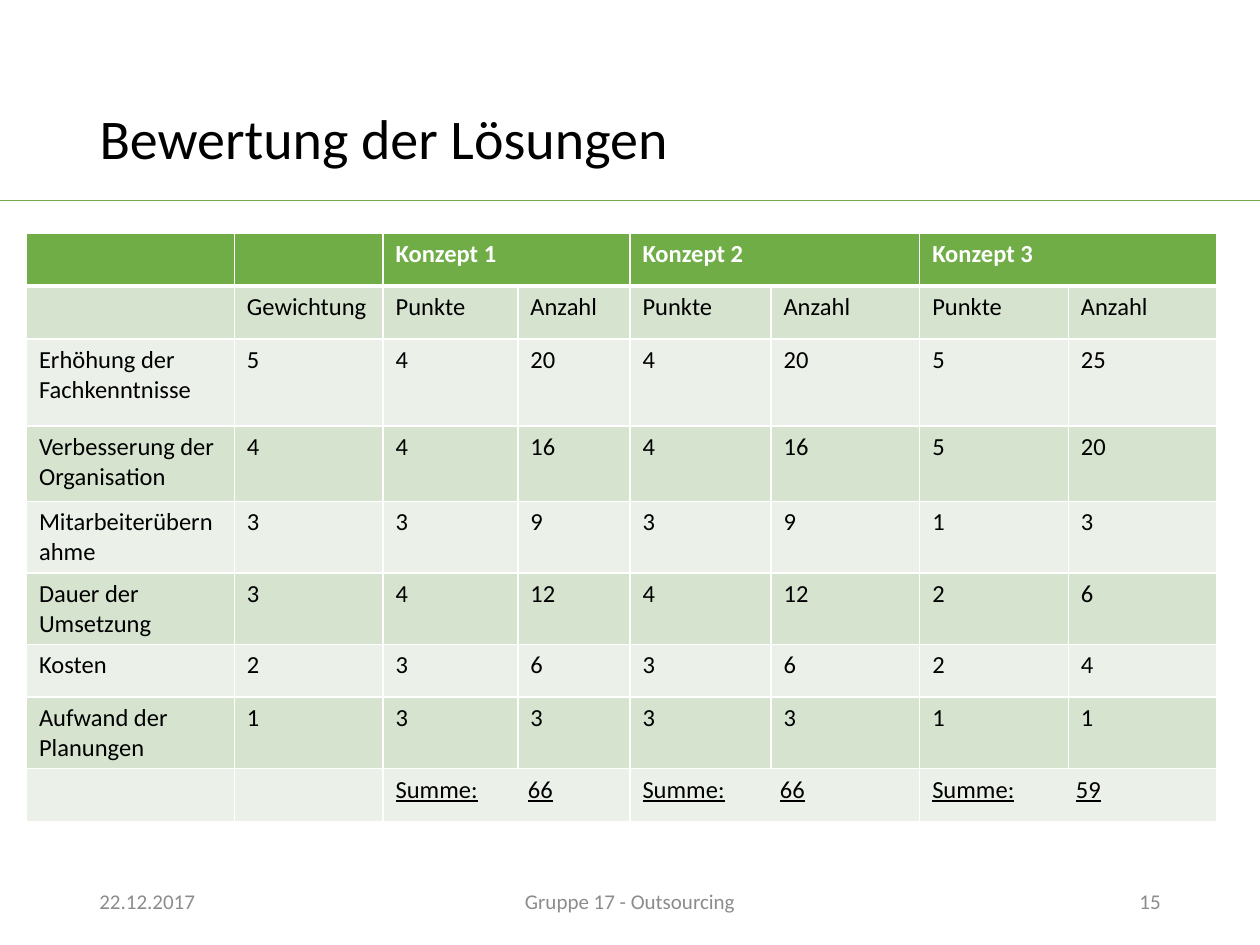
from dataclasses import dataclass

from lxml.etree import SubElement
from pptx import Presentation
from pptx.dml.color import RGBColor
from pptx.enum.shapes import MSO_CONNECTOR
from pptx.enum.text import MSO_ANCHOR, PP_ALIGN
from pptx.oxml.ns import qn
from pptx.util import Inches, Pt


@dataclass(frozen=True)
class Theme:
    """Colours, font and type sizes of the deck."""
    font: str = "Calibri"
    black: str = "000000"
    white: str = "FFFFFF"
    grey: str = "8C8C8C"
    green: str = "70AD47"
    bands: tuple = ("EBF1E9", "D5E3CF")
    title: int = 32
    body: int = 14
    small: int = 12


THEME = Theme()
COLS = (1.65, 1.18, 1.07, 0.89, 1.12, 1.18, 1.18, 1.18)
ROWS = (0.42, 0.42, 0.69, 0.6) + (0.42,) * 5
PAIRS = (2, 4, 6)
STOPS = {2: 1.05, 4: 1.09, 6: 1.14}
SCORES = (
    ("Erhöhung der Fachkenntnisse", 5, (4, 4, 5)),
    ("Verbesserung der Organisation", 4, (4, 4, 5)),
    ("Mitarbeiterübernahme", 3, (3, 3, 1)),
    ("Dauer der Umsetzung", 3, (4, 4, 2)),
    ("Kosten", 2, (3, 3, 2)),
    ("Aufwand der Planungen", 1, (3, 3, 1)),
)


def style(para, size, color, bold=False, line=False):
    """Format every run of a paragraph."""
    for run in para.runs:
        font = run.font
        font.name, font.size = THEME.font, Pt(size)
        font.bold, font.underline = bold, line
        font.color.rgb = RGBColor.from_string(color)


def add_title(slide, box, text):
    """Fill and place the title placeholder."""
    shape = slide.shapes.title
    shape.left, shape.top, shape.width, shape.height = map(Inches, box)
    frame = shape.text_frame
    frame.text = text
    frame.vertical_anchor = MSO_ANCHOR.MIDDLE
    para = frame.paragraphs[0]
    para.alignment, para.line_spacing = PP_ALIGN.LEFT, 0.9
    style(para, THEME.title, THEME.black)


def add_rule(slide, left, top, width):
    """Draw the thin line below the title."""
    rule = slide.shapes.add_connector(
        MSO_CONNECTOR.STRAIGHT, Inches(left), Inches(top),
        Inches(left + width), Inches(top))
    rule.line.color.rgb = RGBColor.from_string(THEME.green)
    rule.line.width = Pt(0.5)
    SubElement(rule._element.spPr, qn("a:effectLst"))


def add_foot(slide, box, texts):
    """Set date, footer and page number across a box."""
    left, top, width, height = box
    side, mid = 2.25, 3.38
    parts = (
        (left, side, PP_ALIGN.LEFT),
        (left + (width - mid) / 2, mid, PP_ALIGN.CENTER),
        (left + width - side, side, PP_ALIGN.RIGHT),
    )
    for text, (x, span, align) in zip(texts, parts):
        frame = slide.shapes.add_textbox(
            Inches(x), Inches(top), Inches(span), Inches(height)).text_frame
        frame.word_wrap = True
        frame.vertical_anchor = MSO_ANCHOR.MIDDLE
        frame.text = text
        frame.paragraphs[0].alignment = align
        style(frame.paragraphs[0], THEME.small, THEME.grey)


def grid():
    """Return the cell texts, with points and sums worked out."""
    head, names = [""] * 8, ["", "Gewichtung"] + ["Punkte", "Anzahl"] * 3
    sums = [""] * 8
    for i, col in enumerate(PAIRS):
        total = sum(weight * marks[i] for _, weight, marks in SCORES)
        head[col] = f"Konzept {i + 1}"
        sums[col] = f"Summe:\t{total}"
    body = []
    for name, weight, marks in SCORES:
        pairs = [n for mark in marks for n in (mark, mark * weight)]
        body.append([name, str(weight)] + [str(n) for n in pairs])
    return [head, names, *body, sums]


def edge(cell, row):
    """Draw white borders, thick below the header row."""
    props = cell._tc.get_or_add_tcPr()
    thick = {(0, "lnB"), (1, "lnT")}
    for tag in ("lnL", "lnR", "lnT", "lnB"):
        width = Pt(3 if (row, tag) in thick else 1)
        line = SubElement(props, qn(f"a:{tag}"), w=str(width))
        fill = SubElement(line, qn("a:solidFill"))
        SubElement(fill, qn("a:srgbClr"), val=THEME.white)


def add_stop(para, pos):
    """Give a paragraph one left tab stop."""
    tabs = SubElement(para._p.get_or_add_pPr(), qn("a:tabLst"))
    SubElement(tabs, qn("a:tab"), pos=str(Inches(pos)), algn="l")


def add_grid(slide, left, top):
    """Build the rating table at a corner."""
    cells, last = grid(), len(ROWS) - 1
    table = slide.shapes.add_table(
        len(ROWS), len(COLS), Inches(left), Inches(top),
        Inches(sum(COLS)), Inches(sum(ROWS))).table
    for col, width in zip(table.columns, COLS):
        col.width = Inches(width)
    for row, height in zip(table.rows, ROWS):
        row.height = Inches(height)
    for r, texts in enumerate(cells):
        top_row, sum_row = r == 0, r == last
        for c, text in enumerate(texts):
            cell = table.cell(r, c)
            edge(cell, r)
            cell.fill.solid()
            cell.fill.fore_color.rgb = RGBColor.from_string(
                THEME.green if top_row else THEME.bands[r % 2])
            para = cell.text_frame.paragraphs[0]
            if text:
                para.text = text
            if sum_row and c in STOPS:
                add_stop(para, STOPS[c])
            style(para, THEME.body, THEME.white if top_row else THEME.black,
                  top_row, sum_row)
        if top_row or sum_row:
            for c in PAIRS:
                table.cell(r, c).merge(table.cell(r, c + 1))


def main():
    """Build and save the slide."""
    deck = Presentation()
    deck.slide_width, deck.slide_height = Inches(10), Inches(7.5)
    slide = deck.slides.add_slide(deck.slide_layouts[5])
    add_rule(slide, 0, 1.59, 10)
    add_title(slide, (0.69, 0.4, 8.62, 1.45), "Bewertung der Lösungen")
    add_foot(slide, (0.69, 6.95, 8.62, 0.4),
             ("22.12.2017", "Gruppe 17 - Outsourcing", "15"))
    add_grid(slide, 0.21, 1.85)
    deck.save("out.pptx")


if __name__ == "__main__":
    main()
